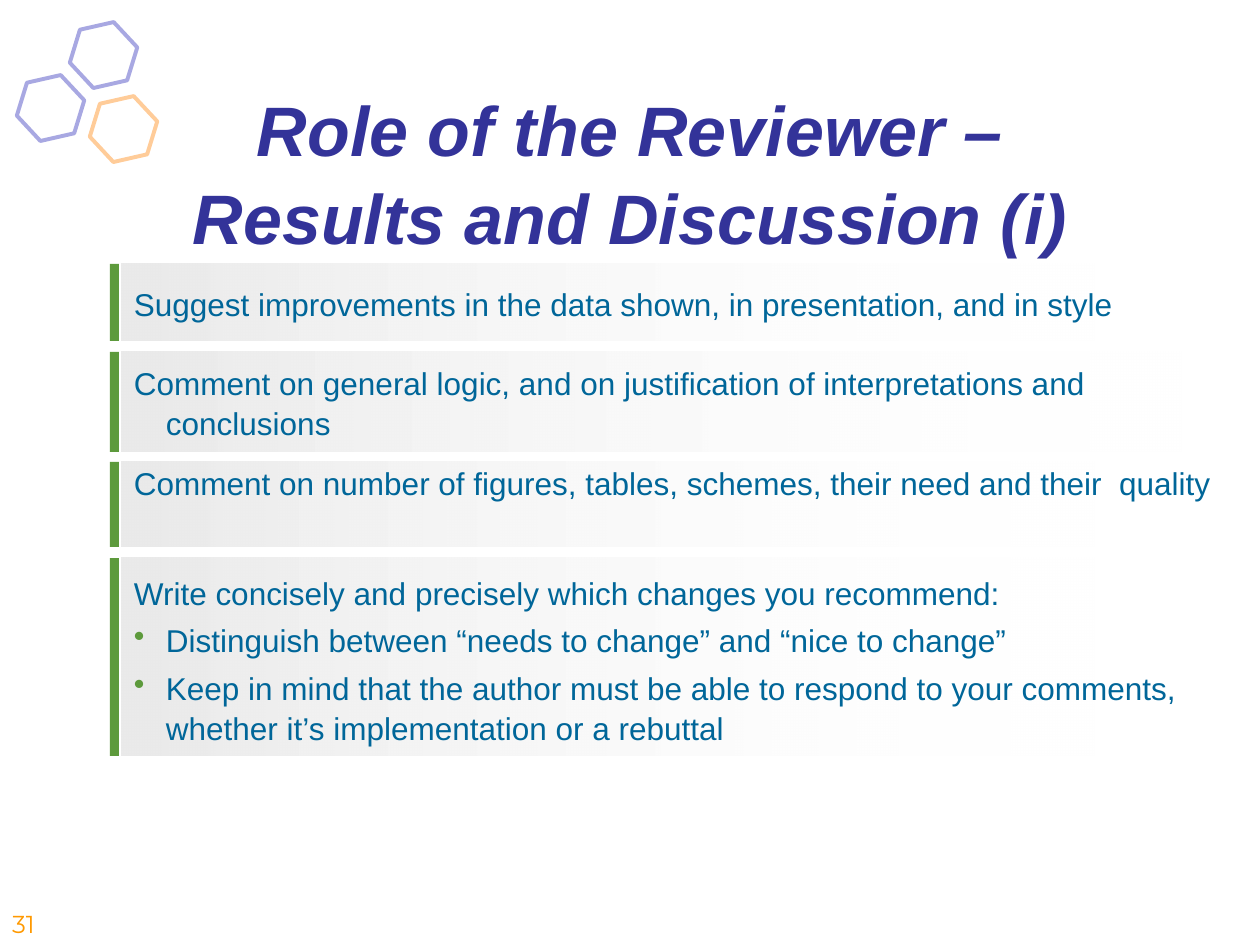
from dataclasses import dataclass

from lxml import etree
from pptx import Presentation
from pptx.dml.color import RGBColor
from pptx.enum.shapes import MSO_SHAPE
from pptx.enum.text import MSO_ANCHOR, MSO_AUTO_SIZE, PP_ALIGN
from pptx.oxml.ns import qn
from pptx.util import Emu, Pt

HEXAGON, RECTANGLE = MSO_SHAPE.HEXAGON, MSO_SHAPE.RECTANGLE
MIDDLE, TOP = MSO_ANCHOR.MIDDLE, MSO_ANCHOR.TOP
LEFT, CENTER = PP_ALIGN.LEFT, PP_ALIGN.CENTER
GROW, FIXED = MSO_AUTO_SIZE.SHAPE_TO_FIT_TEXT, MSO_AUTO_SIZE.NONE


@dataclass(frozen=True)
class Theme:
    title: str = "333399"
    body: str = "006699"
    accent: str = "5D9A3C"
    panel: str = "EAEAEA"
    fade: str = "FFFFFF"
    number: str = "FF9900"
    lilac: str = "A8A8E2"
    peach: str = "FFCC99"
    font: str = "Arial"
    number_font: str = "Montserrat"
    title_size: int = 40
    body_size: int = 18
    number_size: int = 14


THEME = Theme()
SLIDE_BOX = (0, 0, 1260, 945)
INDENT = 32


def px(length):
    return Emu(round(length * 914400 / 126))


def rgb(code):
    return RGBColor.from_string(code)


def add_box(slide, kind, box):
    shape = slide.shapes.add_shape(kind, *map(px, box))
    shape.shadow.inherit = False
    return shape


def set_indent(paragraph, bullet):
    properties = paragraph._p.get_or_add_pPr()
    properties.set("marL", str(px(INDENT)))
    properties.set("indent", str(-px(INDENT)))
    if bullet:
        color = etree.SubElement(properties, qn("a:buClr"))
        etree.SubElement(color, qn("a:srgbClr"), val=THEME.accent)
        etree.SubElement(properties, qn("a:buChar"), char="•")
    else:
        etree.SubElement(properties, qn("a:buNone"))


def add_text(slide, box, lines, *, size, color, font=THEME.font, bold=False,
             italic=False, align=LEFT, anchor=TOP, inset=(12, 6), spacing=1.05,
             hanging=False, autosize=FIXED):
    frame = slide.shapes.add_textbox(*map(px, box)).text_frame
    frame.word_wrap = True
    frame.auto_size = autosize
    frame.vertical_anchor = anchor
    frame.margin_left = frame.margin_right = px(inset[0])
    frame.margin_top = frame.margin_bottom = px(inset[1])
    for index, line in enumerate(lines):
        paragraph = frame.add_paragraph() if index else frame.paragraphs[0]
        paragraph.text = line
        if hanging:
            set_indent(paragraph, bullet=index > 0)
        paragraph.alignment = align
        paragraph.line_spacing = spacing
        paragraph.space_before = Pt(size / 4 if index else 0)
        for run in paragraph.runs:
            run.font.name = font
            run.font.size = Pt(size)
            run.font.bold = bold
            run.font.italic = italic
            run.font.color.rgb = rgb(color)


def add_hexagons(slide, box):
    left, top, width, height = box
    cells = [(53, 0, THEME.lilac), (0, 53, THEME.lilac), (73, 74, THEME.peach)]
    for x, y, color in cells:
        hexagon = add_box(slide, HEXAGON, (left + x, top + y, width, height))
        hexagon.adjustments[0] = 0.288
        hexagon.adjustments[1] = 1.155
        hexagon.rotation = 107.1
        hexagon.fill.background()
        hexagon.line.color.rgb = rgb(color)
        hexagon.line.width = Pt(2.25)


def add_title(slide, box):
    add_text(slide, box, ["Role of the Reviewer –\vResults and Discussion (i)"],
             size=THEME.title_size, color=THEME.title, bold=True, italic=True,
             align=CENTER, anchor=MIDDLE)


def add_advice(slide, box, text_offset, text_width, lines):
    left, top, width, height = box
    bar = add_box(slide, RECTANGLE, (left, top, 9, height))
    bar.fill.solid()
    bar.fill.fore_color.rgb = rgb(THEME.accent)
    bar.line.fill.background()

    panel = add_box(slide, RECTANGLE, (left + 12, top, width - 12, height))
    panel.fill.gradient()
    panel.fill.gradient_angle = 0
    for stop, color in zip(panel.fill.gradient_stops, (THEME.panel, THEME.fade)):
        stop.color.rgb = rgb(color)
    fade_color = panel.element.xpath(".//a:gs/a:srgbClr")[-1]
    etree.SubElement(fade_color, qn("a:alpha"), val="0")
    panel.line.fill.background()

    text_box = (left + 24, top + text_offset, text_width, height - 2 * text_offset)
    add_text(slide, text_box, lines, size=THEME.body_size, color=THEME.body,
             inset=(0, 0), hanging=True, autosize=GROW)


def add_advice_list(slide, box):
    left, top, width, _ = box
    advice = [
        (0, 77, width, 19, 983,
         ["Suggest improvements in the data shown, in presentation, and in style"]),
        (88, 100, width + 87, 10, 1105,
         ["Comment on general logic, and on justification of interpretations "
          "and conclusions"]),
        (198, 85, width, 0, 1105,
         ["Comment on number of figures, tables, schemes, their need and their  quality"]),
        (294, 198, width, 14, 1074,
         ["Write concisely and precisely which changes you recommend:",
          "Distinguish between “needs to change” and “nice to change”",
          "Keep in mind that the author must be able to respond to your comments, "
          "whether it’s implementation or a rebuttal"]),
    ]
    for y, height, panel_width, text_offset, text_width, lines in advice:
        add_advice(slide, (left, top + y, panel_width, height),
                   text_offset, text_width, lines)


def add_page_number(slide, box):
    add_text(slide, box, ["31"], size=THEME.number_size, color=THEME.number,
             font=THEME.number_font, spacing=1)


def main():
    deck = Presentation()
    deck.slide_width, deck.slide_height = map(px, SLIDE_BOX[2:])
    slide = deck.slides.add_slide(deck.slide_layouts[6])
    add_hexagons(slide, (16, 25, 69, 60))
    add_title(slide, (63, 115, 1134, 110))
    add_advice_list(slide, (110, 264, 990, 492))
    add_page_number(slide, (0, 903, 84, 42))
    deck.save("out.pptx")


if __name__ == "__main__":
    main()
